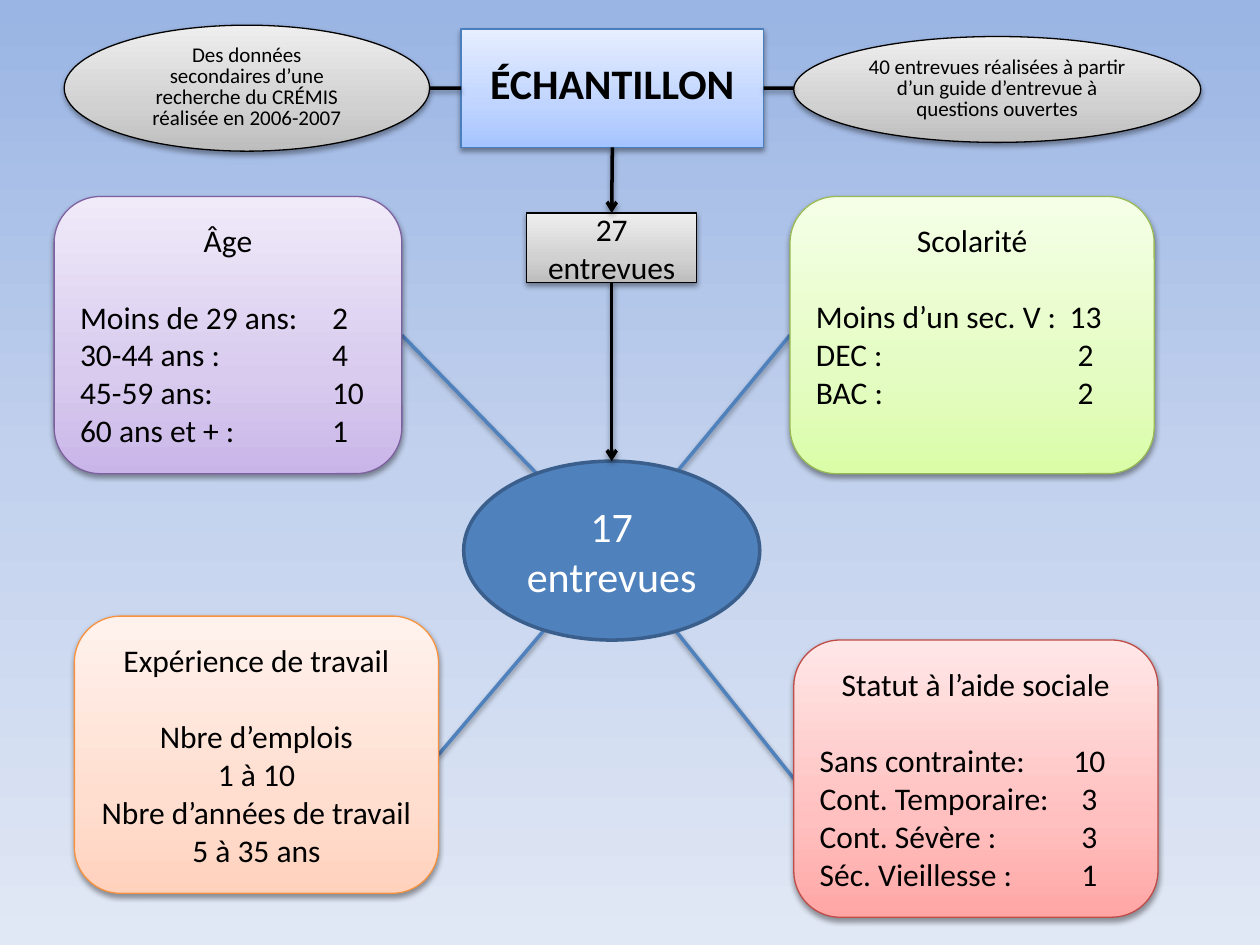
import dataclasses

import lxml.etree
import pptx
import pptx.dml.color
import pptx.enum.shapes
import pptx.enum.text
import pptx.oxml.ns
import pptx.util

SHAPES = pptx.enum.shapes.MSO_SHAPE
ALIGN = pptx.enum.text.PP_ALIGN
qn = pptx.oxml.ns.qn
TOP, LEFT, BOTTOM, RIGHT = range(4)


@dataclasses.dataclass(frozen=True)
class Theme:
    """Colours as hex strings, gradients as (stops, line), sizes in points."""
    font: str = "Calibri"
    title_size: float = 24
    body_size: float = 18
    note_size: float = 12
    thin: float = 0.75
    thick: float = 2
    black: str = "000000"
    white: str = "FFFFFF"
    blue: str = "4F81BD"
    blue_edge: str = "3A5F8C"
    background: tuple = ((0, "9AB5E4"), (50, "C2D1ED"), (100, "E1E8F5"))
    title: tuple = (((0, "A4C4FF"), (35, "BFD4FF"), (100, "E6EEFF")), "4B7EBC")
    grey: tuple = (((0, "BDBDBD"), (35, "D1D1D1"), (100, "EEEEEE")), "000000")
    purple: tuple = (((0, "C9B5E8"), (35, "D8CBEE"), (100, "F0EAF9")), "7D60A0")
    green: tuple = (((0, "DAFDA7"), (35, "E4FCC2"), (100, "F5FFE7")), "98B955")
    orange: tuple = (((0, "FFD2BD"), (35, "FFDED0"), (100, "FFF2ED")), "F69240")
    red: tuple = (((0, "FFA6A5"), (35, "FFC0BF"), (100, "FFE7E7")), "BF4C48")


THEME = Theme()


@dataclasses.dataclass(frozen=True)
class Box:
    """A region in grid cells; the slide has 100 columns and 75 rows."""
    left: float
    top: float
    width: float
    height: float

    def region(self, left, top, width, height):
        """Return a box at an offset inside this one."""
        return Box(self.left + left, self.top + top, width, height)

    def emu(self):
        """Return left, top, width and height as lengths."""
        return [cells(n) for n in (self.left, self.top, self.width, self.height)]


def cells(count):
    """Convert grid cells to a length."""
    return pptx.util.Inches(count / 10)


def color(value):
    """Convert a hex string to a colour."""
    return pptx.dml.color.RGBColor.from_string(value)


def set_gradient(fill, element, stops, angle):
    """Fill with any number of gradient stops."""
    fill.gradient()
    fill.gradient_angle = angle
    stop_list = element.find(".//" + qn("a:gsLst"))
    for stop in list(stop_list):
        stop_list.remove(stop)
    for position, value in stops:
        stop = lxml.etree.SubElement(stop_list, qn("a:gs"), pos=str(position * 1000))
        lxml.etree.SubElement(stop, qn("a:srgbClr"), val=value)


def add_shadow(effects):
    """Put the soft downward shadow in an effect list."""
    shadow = lxml.etree.SubElement(effects, qn("a:outerShdw"), blurRad="40000",
                                   dist="20000", dir="5400000", rotWithShape="0")
    tint = lxml.etree.SubElement(shadow, qn("a:srgbClr"), val=THEME.black)
    lxml.etree.SubElement(tint, qn("a:alpha"), val="38000")


def add_shape(slide, kind, box, style):
    """Add a shaded shape with a thin outline and a shadow."""
    shape = slide.shapes.add_shape(kind, *box.emu())
    stops, edge = style
    set_gradient(shape.fill, shape.element, stops, 90)
    shape.line.color.rgb = color(edge)
    shape.line.width = pptx.util.Pt(THEME.thin)
    shape.shadow.inherit = False
    add_shadow(shape.element.find(".//" + qn("a:effectLst")))
    return shape


def write(shape, lines, size, ink=THEME.black, bold=False, align=ALIGN.CENTER):
    """Write one paragraph per line, centred vertically."""
    frame = shape.text_frame
    frame.word_wrap = True
    frame.vertical_anchor = pptx.enum.text.MSO_ANCHOR.MIDDLE
    for index, line in enumerate(lines):
        paragraph = frame.add_paragraph() if index else frame.paragraphs[0]
        paragraph.alignment = align
        run = paragraph.add_run()
        run.text = line
        run.font.name = THEME.font
        run.font.size = pptx.util.Pt(size)
        run.font.bold = bold
        run.font.color.rgb = color(ink)
    return frame


def add_link(slide, start, end, ink, arrow=False):
    """Draw a shadowed line between points or (shape, side) pairs."""
    fixed = [(0, 0) if hasattr(point[0], "element") else point for point in (start, end)]
    link = slide.shapes.add_connector(pptx.enum.shapes.MSO_CONNECTOR.STRAIGHT,
                                      *[cells(n) for point in fixed for n in point])
    if fixed[0] != start:
        link.begin_connect(*start)
    if fixed[1] != end:
        link.end_connect(*end)
    link.line.color.rgb = color(ink)
    link.line.width = pptx.util.Pt(THEME.thick)
    if arrow:
        lxml.etree.SubElement(link.element.find(".//" + qn("a:ln")), qn("a:tailEnd"), type="arrow")
    add_shadow(lxml.etree.SubElement(link.element.spPr, qn("a:effectLst")))
    return link


def add_note(slide, box, lines):
    """Add a grey ellipse with tightly set small text."""
    shape = add_shape(slide, SHAPES.OVAL, box, THEME.grey)
    for paragraph in write(shape, lines, THEME.note_size).paragraphs:
        paragraph.line_spacing = pptx.util.Pt(THEME.note_size)


def add_header(slide, box):
    """Add the title with a source note on each side and return the title."""
    title_box = box.region(31.5, 0.3, 24, 9.4)
    title = add_shape(slide, SHAPES.RECTANGLE, title_box, THEME.title)
    frame = write(title, ["ÉCHANTILLON"], THEME.title_size, bold=True)
    frame.margin_bottom = cells(1.3)
    add_note(slide, box.region(0, 0, 29, 10),
             ["Des données", "secondaires d’une recherche du CRÉMIS réalisée en 2006-2007"])
    add_note(slide, box.region(57.9, 0.9, 32.3, 8.4),
             ["40 entrevues réalisées à partir d’un guide d’entrevue à questions ouvertes"])
    middle = box.top + 5
    add_link(slide, (title, LEFT), (box.left + 29, middle), THEME.black)
    add_link(slide, (title, RIGHT), (box.left + 57.9, middle), THEME.black)
    return title


def add_flow(slide, box, title):
    """Add the two interview counts in a column below the title."""
    hub = slide.shapes.add_shape(SHAPES.OVAL, *box.region(0, 19.7, box.width, 14.2).emu())
    hub.fill.solid()
    hub.fill.fore_color.rgb = color(THEME.blue)
    hub.line.color.rgb = color(THEME.blue_edge)
    hub.line.width = pptx.util.Pt(THEME.thick)
    hub.shadow.inherit = False
    write(hub, ["17 entrevues"], THEME.title_size, THEME.white)
    step_box = box.region((box.width - 13.5) / 2, 0, 13.5, 5.5)
    step = add_shape(slide, SHAPES.RECTANGLE, step_box, THEME.grey)
    write(step, ["27 entrevues"], THEME.body_size)
    add_link(slide, (title, BOTTOM), (step, TOP), THEME.black, arrow=True)
    add_link(slide, (step, BOTTOM), (hub, TOP), THEME.black, arrow=True)
    return box.left + box.width / 2, box.top + 26.8


def add_card(slide, box, style, lines, tab=None, spare_rows=0):
    """Add a rounded card with a heading and lines, values at a tab stop."""
    card = add_shape(slide, SHAPES.ROUNDED_RECTANGLE, box, style)
    frame = write(card, lines, THEME.body_size, align=ALIGN.LEFT if tab else ALIGN.CENTER)
    frame.margin_bottom = cells(0.5 + 3.05 * spare_rows)
    heading, *rows = frame.paragraphs
    heading.alignment = ALIGN.CENTER
    heading.space_after = pptx.util.Pt(22)
    for paragraph in rows if tab else []:
        position, kind = tab
        tabs = lxml.etree.SubElement(paragraph._p.get_or_add_pPr(), qn("a:tabLst"))
        lxml.etree.SubElement(tabs, qn("a:tab"), pos=str(int(cells(position))), algn=kind)
    return card


def add_cards(slide, box, hub_center):
    """Add the four sample profiles and tie each one to the hub."""
    centered = (21.4, "ctr")
    cards = [
        (add_card(slide, box.region(0, 0, 27.6, 22), THEME.purple,
                  ["Âge", "Moins de 29 ans:\t2", "30-44 ans :\t4", "45-59 ans:\t10",
                   "60 ans et + :\t1"], (20, "l")), RIGHT),
        (add_card(slide, box.region(58.4, 0, 28.9, 22), THEME.green,
                  ["Scolarité", "Moins d’un sec. V :\t13", "DEC :\t2", "BAC :\t2"],
                  centered, spare_rows=1), LEFT),
        (add_card(slide, box.region(1.6, 33.3, 28.9, 22), THEME.orange,
                  ["Expérience de travail", "Nbre d’emplois", "1 à 10",
                   "Nbre d’années de travail", "5 à 35 ans"]), RIGHT),
        (add_card(slide, box.region(58.7, 35.2, 28.9, 22), THEME.red,
                  ["Statut à l’aide sociale", "Sans contrainte:\t10", "Cont. Temporaire:\t3",
                   "Cont. Sévère :\t3", "Séc. Vieillesse :\t1"], centered), LEFT),
    ]
    for anchor in cards:
        link = add_link(slide, anchor, hub_center, THEME.blue)
        link.element.getparent().insert(2, link.element)


def main():
    """Build the sample slide and save it."""
    presentation = pptx.Presentation()
    presentation.slide_width, presentation.slide_height = cells(100), cells(75)
    slide = presentation.slides.add_slide(presentation.slide_layouts[6])
    set_gradient(slide.background.fill, slide.element, THEME.background, 270)
    title = add_header(slide, Box(5.1, 2, 90.2, 10))
    hub_center = add_flow(slide, Box(36.8, 16.9, 23.5, 33.9), title)
    add_cards(slide, Box(4.3, 15.6, 87.6, 57.2), hub_center)
    presentation.save("out.pptx")


if __name__ == "__main__":
    main()
